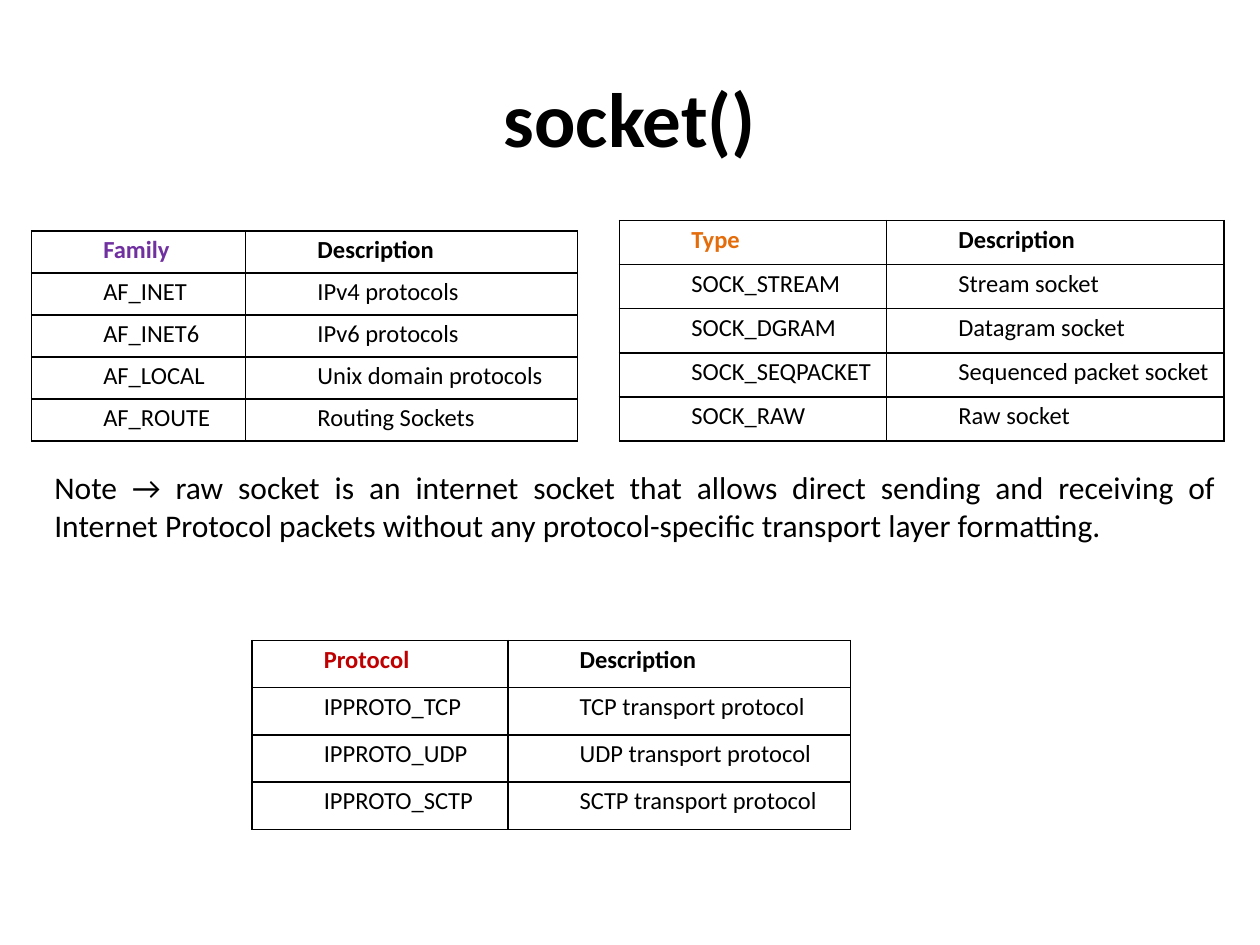
from lxml import etree
from pptx import Presentation
from pptx import util as u
from pptx.dml.color import RGBColor
from pptx.enum import text as t
from pptx.oxml.ns import qn

BLACK = "000000"


def color(hex_code):
    return RGBColor.from_string(hex_code)


def write(frame, content, size=14, bold=False, ink=BLACK,
          align=t.PP_ALIGN.JUSTIFY, spacing=None, indent=None):
    """Put one formatted paragraph into a text frame."""
    paragraph = frame.paragraphs[0]
    paragraph.alignment = align
    if spacing:
        paragraph.line_spacing = spacing
    if indent:
        properties = paragraph._p.get_or_add_pPr()
        properties.set("marL", "0")
        properties.set("indent", str(u.Inches(indent)))
    run = paragraph.add_run()
    run.text = content
    run.font.name = "Calibri"
    run.font.size = u.Pt(size)
    run.font.bold = bold
    run.font.color.rgb = color(ink)


class SlideBuilder:
    """Holds the slide and a grid of 120 columns by 90 rows."""
    cell_margin = 0.07
    border_width = 1

    def __init__(self, deck):
        self.slide = deck.slides.add_slide(deck.slide_layouts[6])
        self.column = deck.slide_width / 120
        self.row = deck.slide_height / 90

    def place(self, left, top, width, height):
        return (round(left * self.column), round(top * self.row),
                round(width * self.column), round(height * self.row))

    def text(self, content, area, anchor=t.MSO_ANCHOR.TOP, **style):
        frame = self.slide.shapes.add_textbox(*self.place(*area)).text_frame
        frame.word_wrap = True
        frame.vertical_anchor = anchor
        write(frame, content, **style)

    def border(self, cell):
        properties = cell._tc.get_or_add_tcPr()
        for side in ("a:lnL", "a:lnR", "a:lnT", "a:lnB"):
            line = etree.SubElement(properties, qn(side),
                                    w=str(u.Pt(self.border_width)))
            fill = etree.SubElement(line, qn("a:solidFill"))
            etree.SubElement(fill, qn("a:srgbClr"), val=BLACK)

    def table(self, heading, accent, entries, area, first_width):
        """Two-column table: a coloured heading, then name and description."""
        lines = [(heading, "Description"), *entries]
        left, top, width, height = self.place(*area)
        grid = self.slide.shapes.add_table(
            len(lines), 2, left, top, width, height).table
        grid.columns[0].width = u.Inches(first_width)
        grid.columns[1].width = width - u.Inches(first_width)
        for r, line in enumerate(lines):
            grid.rows[r].height = height // len(lines)
            for c, content in enumerate(line):
                cell = grid.cell(r, c)
                cell.margin_left = cell.margin_right = u.Inches(self.cell_margin)
                cell.margin_top = cell.margin_bottom = 0
                self.border(cell)
                cell.fill.background()
                write(cell.text_frame, content, bold=r == 0,
                      ink=accent if r == c == 0 else BLACK,
                      spacing=1.15, indent=0.5)


def main():
    deck = Presentation()
    deck.slide_width, deck.slide_height = u.Inches(10), u.Inches(7.5)
    page = SlideBuilder(deck)

    # Title
    page.text("socket()", (6, 3.6, 108, 15), anchor=t.MSO_ANCHOR.MIDDLE,
              size=44, bold=True, align=t.PP_ALIGN.CENTER)

    # Arguments of the call: family, type and protocol
    families = [("AF_INET", "IPv4 protocols"),
                ("AF_INET6", "IPv6 protocols"),
                ("AF_LOCAL", "Unix domain protocols"),
                ("AF_ROUTE", "Routing Sockets")]
    page.table("Family", "7030A0", families, (3, 22, 52, 20), 1.7)

    socket_types = [("SOCK_STREAM", "Stream socket"),
                    ("SOCK_DGRAM", "Datagram socket"),
                    ("SOCK_SEQPACKET", "Sequenced packet socket"),
                    ("SOCK_RAW", "Raw socket")]
    page.table("Type", "E46C0A", socket_types, (59, 21, 57.6, 21), 2.12)

    protocols = [(f"IPPROTO_{name}", f"{name} transport protocol")
                 for name in ("TCP", "UDP", "SCTP")]
    page.table("Protocol", "C00000", protocols, (24, 61, 57, 18), 2.03)

    # Note on raw sockets
    page.text("Note → raw socket is an internet socket that allows direct "
              "sending and receiving of Internet Protocol packets without any "
              "protocol-specific transport layer formatting.",
              (4, 44, 113, 8.5), size=18)

    deck.save("out.pptx")


if __name__ == "__main__":
    main()
